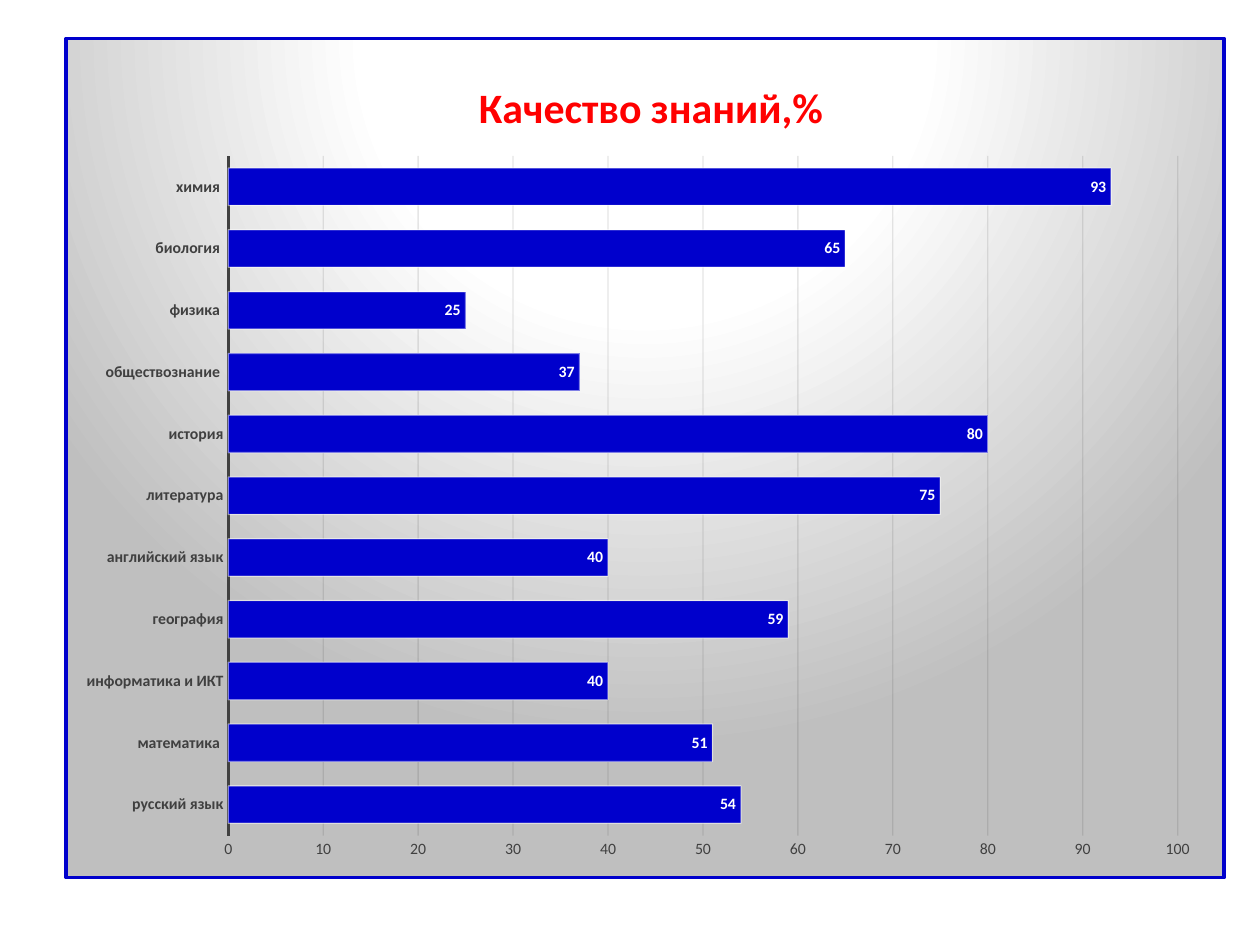
from pptx import Presentation
from pptx.chart.data import CategoryChartData as Data
from pptx.dml.color import RGBColor as RGB
from pptx.enum.chart import XL_CHART_TYPE as Kind, XL_LABEL_POSITION as Pos, XL_TICK_MARK as Tick
from pptx.oxml import parse_xml
from pptx.oxml.ns import nsdecls
from pptx.util import Inches, Pt

# Content, from the bottom bar up
TITLE = "Качество знаний,%"
MARKS = [
    ("русский язык", 54),
    ("математика ", 51),
    ("информатика и ИКТ", 40),
    ("география", 59),
    ("английский язык", 40),
    ("литература", 75),
    ("история", 80),
    ("обществознание ", 37),
    ("физика ", 25),
    ("биология ", 65),
    ("химия ", 93),
]
THEME = dict(face="Calibri", head=24, small=9, base=10, red="FF0000", blue="0000CC",
             white="FFFFFF", gray="404040", grid="0D0D0D", shade="BFBFBF", black="000000")
BOX = (0.51, 0.29, 9.22, 6.69)


def style(font, size="small", color="gray", bold=False):
    font.name, font.size, font.bold = THEME["face"], Pt(THEME[size]), bold
    font.color.rgb = RGB.from_string(THEME[color])


def write(frame, text, **form):
    frame.text = text
    style(frame.paragraphs[0].runs[0].font, **form)


def stroke(line, color, width):
    line.color.rgb = RGB.from_string(THEME[color])
    line.width = Pt(width)


def fade(clr, share):
    clr.append(parse_xml(f'<a:alpha {nsdecls("a")} val="{share * 1000}"/>'))


def place(node, index, inner=False, **spots):
    """Fix a chart part at fractions of the chart area."""
    for old in node.xpath("c:layout"):
        node.remove(old)
    keys = ["layoutTarget"] * inner + ["xMode", "yMode"] + list(spots)
    vals = ["inner"] * inner + ["edge", "edge"] + list(spots.values())
    body = "".join(f'<c:{k} val="{v}"/>' for k, v in zip(keys, vals))
    node.insert(index, parse_xml(
        f'<c:layout {nsdecls("c")}><c:manualLayout>{body}</c:manualLayout></c:layout>'))


# Slide
deck = Presentation()
deck.slide_width, deck.slide_height = Inches(10), Inches(7.5)
slide = deck.slides.add_slide(deck.slide_layouts[6])

# Chart
data = Data(number_format="General")
data.categories = [name for name, mark in MARKS]
data.add_series("Series 1", [mark for name, mark in MARKS])
chart = slide.shapes.add_chart(Kind.BAR_CLUSTERED, *map(Inches, BOX), data).chart
chart.has_legend = False
style(chart.font, "base", "black")
root = chart.element

# Title
chart.has_title = True
write(chart.chart_title.text_frame, TITLE, size="head", color="red", bold=True)
chart.chart_title.include_in_layout = False
place(root.xpath("c:chart/c:title")[0], 1, x=0.35, y=0.04)
place(root.xpath("c:chart/c:plotArea")[0], 0, True, x=0.14, y=0.14, w=0.82, h=0.81)

# Axes
names, scale = chart.category_axis, chart.value_axis
for axis in (names, scale):
    axis.major_tick_mark = axis.minor_tick_mark = Tick.NONE
    style(axis.tick_labels.font, bold=axis is names)
stroke(names.format.line, "gray", 1.5)
scale.minimum_scale, scale.maximum_scale, scale.major_unit = 0, 100, 10
scale.format.line.fill.background()
scale.has_major_gridlines = True
stroke(scale.major_gridlines.format.line, "grid", 0.75)
fade(root.xpath(".//c:majorGridlines//a:srgbClr")[0], 10)

# Bars and their values
plot = chart.plots[0]
plot.gap_width, plot.vary_by_categories = 65, False
bars = plot.series[0]
bars.format.fill.solid()
bars.format.fill.fore_color.rgb = RGB.from_string(THEME["blue"])
stroke(bars.format.line, "white", 0.75)
fade(root.xpath(".//c:ser/c:spPr/a:ln//a:srgbClr")[0], 50)
labels = bars.data_labels
labels.show_value, labels.position = True, Pos.INSIDE_END
style(labels.font, color="white", bold=True)

# Chart area: round gradient and blue border
stops = "".join(f'<a:gs pos="{at * 1000}"><a:srgbClr val="{THEME[tone]}"/></a:gs>'
                for at, tone in [(0, "white"), (39, "white"), (100, "shade")])
root.xpath("c:chart")[0].addnext(parse_xml(
    f'<c:spPr {nsdecls("c", "a")}><a:gradFill><a:gsLst>{stops}</a:gsLst>'
    '<a:path path="circle"><a:fillToRect l="50000" t="-80000" r="50000" b="180000"/></a:path>'
    f'</a:gradFill><a:ln w="{Pt(2.25)}"><a:solidFill><a:srgbClr val="{THEME["blue"]}"/>'
    '</a:solidFill></a:ln></c:spPr>'))

deck.save("out.pptx")
